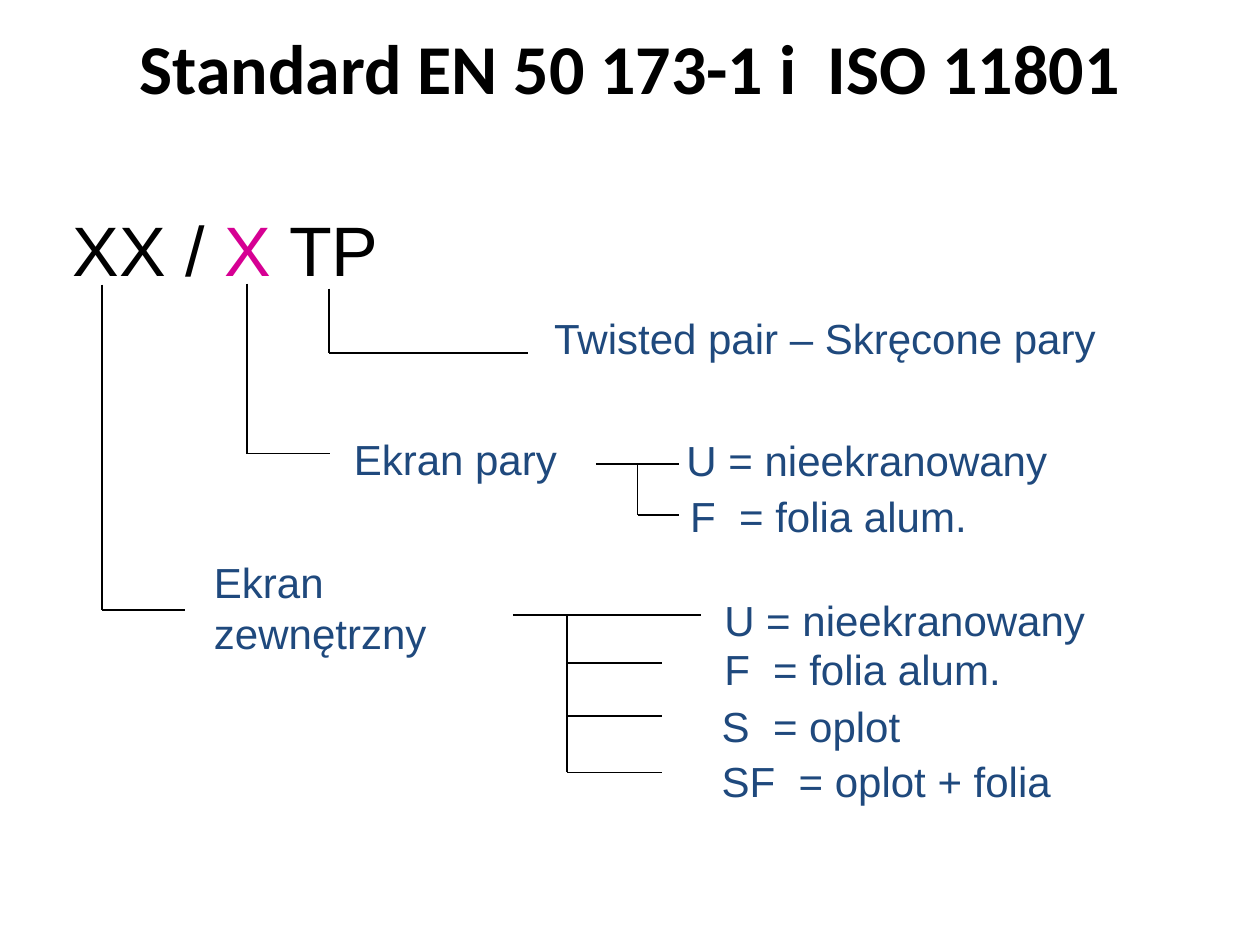
from pptx import Presentation
from pptx import util as u
from pptx.dml.color import RGBColor
from pptx.enum import shapes, text
from pptx.oxml.ns import qn
from lxml import etree

COLORS = {"black": "000000", "blue": "1F497D", "pink": "D60093"}

LABELS = [
    ("Twisted pair – Skręcone pary", 4.3, 2.43, 4.83, 0.5),
    ("Ekran pary", 2.71, 3.39, 2.1, 0.5),
    ("U = nieekranowany", 5.35, 3.4, 3.7, 0.5),
    ("F  = folia alum.", 5.38, 3.84, 3.5, 0.5),
    ("Ekran zewnętrzny", 1.6, 4.37, 2.5, 0.9),
    ("U = nieekranowany", 5.65, 4.67, 3.44, 0.5),
    ("F  = folia alum.", 5.65, 5.06, 3.93, 0.5),
    ("S  = oplot", 5.63, 5.51, 4.14, 0.5),
    ("SF  = oplot + folia", 5.63, 5.95, 4.14, 0.5),
]


def add_run(paragraph, content, *, size=24, font="Arial", color="blue", bold=False):
    """Append one formatted run to a paragraph."""
    run = paragraph.add_run()
    run.text = content
    run.font.size = u.Pt(size)
    run.font.name = font
    run.font.bold = bold
    run.font.color.rgb = RGBColor.from_string(COLORS[color])


def add_label(slide, runs, left, top, width, height, **style):
    """Add a wrapped text box made of (text, color) runs."""
    box = slide.shapes.add_textbox(*map(u.Inches, (left, top, width, height)))
    box.text_frame.word_wrap = True
    for content, color in runs:
        add_run(box.text_frame.paragraphs[0], content, color=color, **style)


def add_line(slide, *ends):
    """Draw a thin black line from x1, y1 to x2, y2."""
    line = slide.shapes.add_connector(
        shapes.MSO_CONNECTOR.STRAIGHT, *map(u.Inches, ends))
    line.line.width = u.Pt(1)
    line.line.color.rgb = RGBColor.from_string(COLORS["black"])
    etree.SubElement(line._element.spPr, qn("a:effectLst"))


def add_elbow(slide, x, top, bottom, right):
    """Draw a line down from a code letter and then right to its label."""
    add_line(slide, x, top, x, bottom)
    add_line(slide, x, bottom, right, bottom)


def add_branches(slide, left, right, trunk, rows, tip):
    """Draw a top line with a trunk below it and a branch at each row."""
    add_line(slide, left, rows[0], right, rows[0])
    add_line(slide, trunk, rows[0], trunk, rows[-1])
    for row in rows[1:]:
        add_line(slide, trunk, row, tip, row)


def add_title(slide, content):
    """Place and format the slide title."""
    title = slide.shapes.title
    title.left, title.top, title.width, title.height = map(
        u.Inches, (0, 0, 10, 1.06))
    frame = title.text_frame
    frame.vertical_anchor = text.MSO_ANCHOR.MIDDLE
    paragraph = frame.paragraphs[0]
    paragraph.alignment = text.PP_ALIGN.CENTER
    add_run(paragraph, content, size=40, font="Calibri", color="black", bold=True)


def main():
    """Build the cable naming slide."""
    presentation = Presentation()
    presentation.slide_width = u.Inches(10)
    presentation.slide_height = u.Inches(7.5)
    slide = presentation.slides.add_slide(
        presentation.slide_layouts.get_by_name("Title Only"))

    add_title(slide, "Standard EN 50 173-1 i  ISO 11801")
    add_label(slide, [("XX / ", "black"), ("X", "pink"), (" TP", "black")],
              0.48, 1.59, 7.25, 0.77, size=40)
    for content, *place in LABELS:
        add_label(slide, [(content, "blue")], *place)

    add_elbow(slide, 0.81, 2.26, 4.84, 1.47)
    add_elbow(slide, 1.96, 2.25, 3.6, 2.62)
    add_elbow(slide, 2.61, 2.29, 2.8, 4.19)
    add_branches(slide, 4.73, 5.39, 5.06, [3.68, 4.09], 5.39)
    add_branches(slide, 4.07, 5.56, 4.5, [4.88, 5.26, 5.68, 6.13], 5.25)

    presentation.save("out.pptx")


if __name__ == "__main__":
    main()
